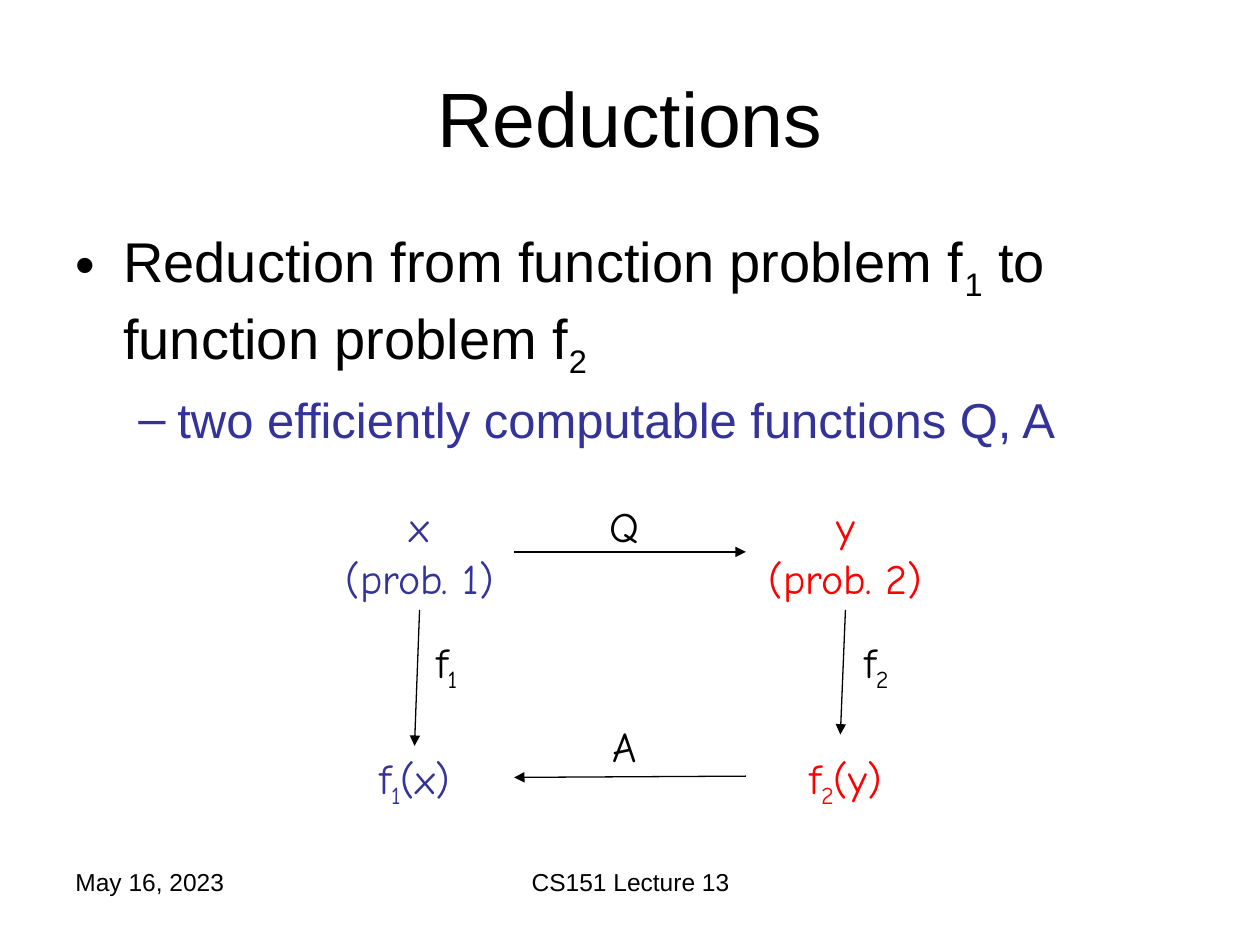
import pptx
import pptx.util
import pptx.dml.color
import pptx.enum.shapes
import pptx.enum.text
import pptx.oxml
import pptx.oxml.ns

COLORS = {"ink": "000000", "first": "333399", "second": "FF0000"}
BODY_FONT, DIAGRAM_FONT = "Arial", "Comic Neue"
Inches, Pt = pptx.util.Inches, pptx.util.Pt
ALIGN = pptx.enum.text.PP_ALIGN

# Content: "_" marks the next character as a subscript
TITLE = "Reductions"
BULLETS = [  # text, size, colour, bullet, left margin, hanging indent
    ("Reduction from function problem f_1 to function problem f_2", 32, "ink", "•", 0.38, 0.38),
    ("two efficiently computable functions Q, A", 28, "first", "–", 0.81, 0.31),
]
FOOTERS = [  # text, left, width, alignment
    ("May 16, 2023", 0.5, 2.33, ALIGN.LEFT),
    ("CS151 Lecture 13", 3.42, 3.17, ALIGN.CENTER),
]

# Diagram grid: the corners sit at the crossings of two columns and two rows
LEFT, RIGHT = 4.08, 5.92          # inner edges of the columns
TOP, BOTTOM = 3.92, 5.92          # tops of the rows
LINE_H, CORNER_H, NODE_W, LABEL_W = 0.5, 0.92, 1.58, 0.75
CORNERS = [  # lines, left, top, width, height, colour
    (["x", "(prob. 1)"], LEFT - 1.5, TOP, 1.5, CORNER_H, "first"),
    (["y", "(prob. 2)"], RIGHT, TOP, NODE_W, CORNER_H, "second"),
    (["f_1(x)"], LEFT - NODE_W, BOTTOM, NODE_W, LINE_H, "first"),
    (["f_2(y)"], RIGHT, BOTTOM, NODE_W, LINE_H, "second"),
]
LABELS = [("Q", 4.58, TOP), ("A", 4.58, 5.67), ("f_1", 3.17, 5), ("f_2", 6.58, 5)]
ARROWS = [  # start, end
    ((LEFT, TOP + CORNER_H / 2), (RIGHT, TOP + CORNER_H / 2)),
    ((RIGHT, 6.16), (LEFT, 6.17)),
    ((3.33, TOP + CORNER_H), (3.29, BOTTOM)),
    ((6.71, TOP + CORNER_H), (6.67, 5.83)),
]


def color(name):
    return pptx.dml.color.RGBColor.from_string(COLORS[name])


def append_xml(parent, tag, attributes=""):
    namespace = pptx.oxml.ns.nsdecls("a")
    parent.append(pptx.oxml.parse_xml(f"<a:{tag} {namespace} {attributes}/>"))


def write(paragraph, text, size, font, ink="ink", align=ALIGN.LEFT):
    paragraph.alignment = align
    paragraph.font.size = Pt(size)
    paragraph.font.name = font
    paragraph.font.color.rgb = color(ink)
    plain, *rest = text.split("_")
    paragraph.add_run().text = plain
    for part in rest:
        subscript = paragraph.add_run()
        subscript.text = part[0]
        subscript.font._element.set("baseline", "-25000")
        if part[1:]:
            paragraph.add_run().text = part[1:]


def add_box(slide, left, top, width, height):
    frame = slide.shapes.add_textbox(*map(Inches, (left, top, width, height))).text_frame
    frame.word_wrap = True
    return frame


def add_lines(slide, lines, left, top, width, height, ink="ink"):
    frame = add_box(slide, left, top, width, height)
    for i, line in enumerate(lines):
        paragraph = frame.add_paragraph() if i else frame.paragraphs[0]
        paragraph.space_before = Pt(1.2)
        write(paragraph, line, 24, DIAGRAM_FONT, ink, ALIGN.CENTER)


def add_arrow(slide, start, end):
    arrow = slide.shapes.add_connector(
        pptx.enum.shapes.MSO_CONNECTOR.STRAIGHT, *map(Inches, start + end))
    arrow.line.color.rgb = color("ink")
    arrow.line.width = Pt(0.75)
    append_xml(arrow.line._get_or_add_ln(), "tailEnd", 'type="triangle"')
    append_xml(arrow._element.spPr, "effectLst")


def main():
    deck = pptx.Presentation()
    deck.slide_width, deck.slide_height = Inches(10), Inches(7.5)
    slide = deck.slides.add_slide(deck.slide_layouts[5])

    # Title
    title = slide.shapes.title
    title.left, title.top, title.width, title.height = map(Inches, (0.5, 0.3, 9, 1.25))
    title.text_frame.vertical_anchor = pptx.enum.text.MSO_ANCHOR.MIDDLE
    write(title.text_frame.paragraphs[0], TITLE, 44, BODY_FONT, align=ALIGN.CENTER)

    # Bullets
    body = add_box(slide, 0.5, 1.75, 9, 4.95)
    for i, (text, size, ink, bullet, margin, hanging) in enumerate(BULLETS):
        paragraph = body.add_paragraph() if i else body.paragraphs[0]
        paragraph.level = i
        paragraph.space_before = Pt(size * 0.2)
        properties = paragraph._p.get_or_add_pPr()
        properties.set("marL", str(Inches(margin)))
        properties.set("indent", str(-Inches(hanging)))
        append_xml(properties, "buFont", f'typeface="{BODY_FONT}"')
        append_xml(properties, "buChar", f'char="{bullet}"')
        write(paragraph, text, size, BODY_FONT, ink)

    # Diagram
    for corner in CORNERS:
        add_lines(slide, *corner)
    for label, left, top in LABELS:
        add_lines(slide, [label], left, top, LABEL_W, LINE_H)
    for start, end in ARROWS:
        add_arrow(slide, start, end)

    # Footers
    for text, left, width, align in FOOTERS:
        footer = add_box(slide, left, 6.83, width, 0.52)
        write(footer.paragraphs[0], text, 14, BODY_FONT, align=align)

    deck.save("out.pptx")


if __name__ == "__main__":
    main()
